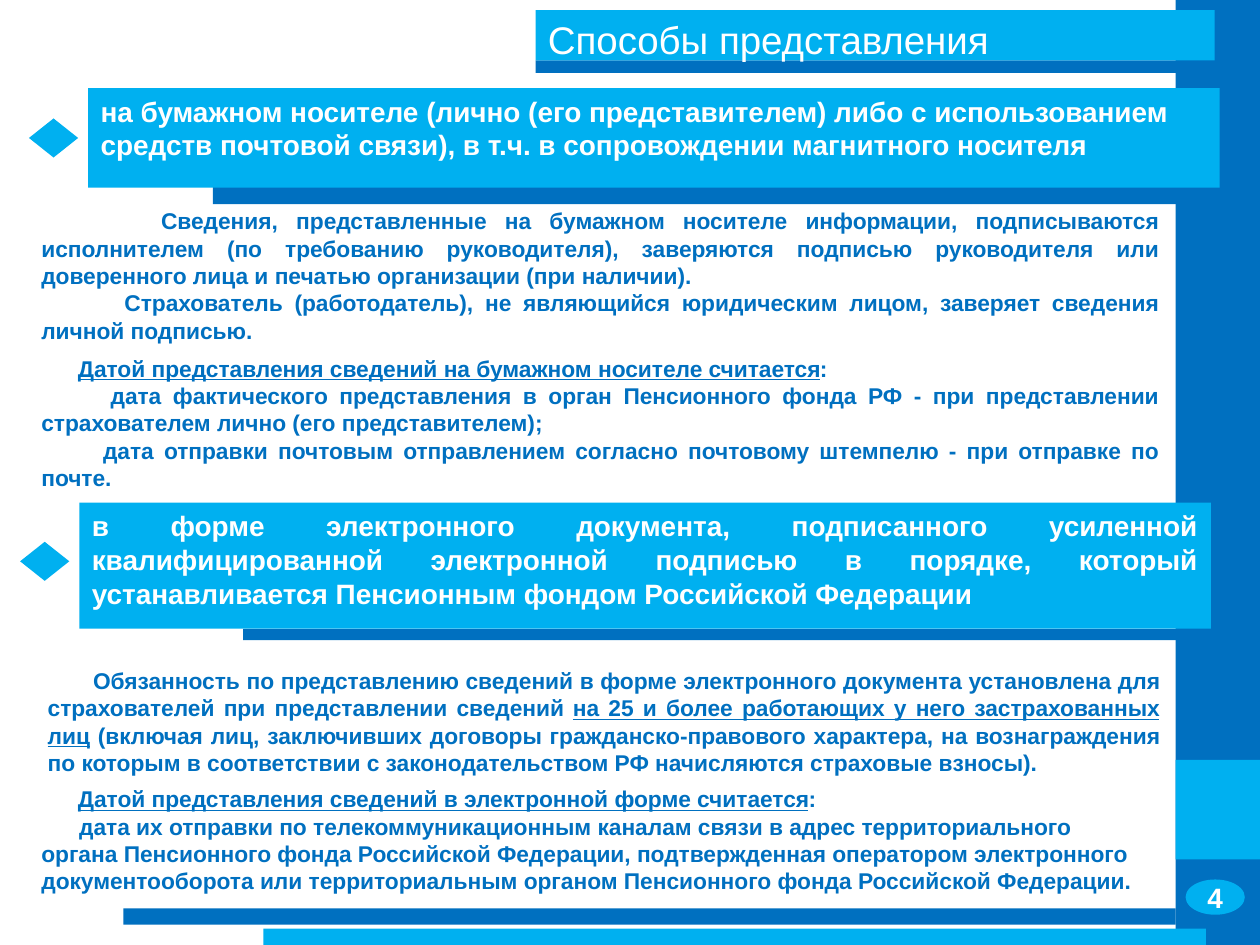
from pptx import Presentation
from pptx.dml.color import RGBColor
from pptx.enum.shapes import MSO_SHAPE as SH
from pptx.enum.text import MSO_ANCHOR as ANCHOR, PP_ALIGN as ALIGN
from pptx.util import Pt

PX = 9144  # 100 px to the inch
BLUE, SKY, WHITE = "0070C0", "00B0F0", "FFFFFF"

prs = Presentation()
prs.slide_width, prs.slide_height = 1000 * PX, 750 * PX
s = prs.slides.add_slide(prs.slide_layouts[6])


def add_shape(kind, box, color):
    sp = s.shapes.add_shape(kind, *[v * PX for v in box])
    sp.shadow.inherit = False
    sp.fill.solid()
    sp.fill.fore_color.rgb = RGBColor.from_string(color)
    sp.line.fill.background()
    return sp


def write(sp, paragraphs, size, color, bold=True, align=ALIGN.LEFT, anchor=ANCHOR.TOP):
    """Each paragraph is (first-line indent, run, run, ...); every second run is underlined."""
    tf = sp.text_frame
    tf.word_wrap = True
    tf.vertical_anchor = anchor
    for i, (indent, *runs) in enumerate(paragraphs):
        p = tf.paragraphs[0] if i == 0 else tf.add_paragraph()
        p.alignment = align
        if indent:
            p._p.get_or_add_pPr().set("indent", str(indent * PX))
        for j, text in enumerate(runs):
            r = p.add_run()
            r.text = text
            r.font.name, r.font.size, r.font.bold = "Arial", Pt(size), bold
            r.font.color.rgb = RGBColor.from_string(color)
            if j % 2:
                r.font.underline = True


# Side band, page number and footer bars
add_shape(SH.RECTANGLE, (933, 0, 67, 750), BLUE)
add_shape(SH.RECTANGLE, (933, 603, 67, 79), SKY)
number = add_shape(SH.OVAL, (941, 698, 47, 28), SKY)
write(number, [(0, "4")], 16, WHITE, align=ALIGN.CENTER, anchor=ANCHOR.MIDDLE)
add_shape(SH.RECTANGLE, (98, 721, 835, 13), BLUE)
add_shape(SH.RECTANGLE, (209, 737, 748, 13), SKY)

# Title and section banners, each with a dark bar below
banners = [
    ((425, 48, 539, 10), (425, 8, 539, 40), 22, False, ALIGN.LEFT,
     "Способы представления"),
    ((169, 147, 799, 15), (70, 70, 898, 79), 16, True, ALIGN.LEFT,
     "на бумажном носителе (лично (его представителем) либо с использованием "
     "средств почтовой связи), в т.ч. в сопровождении магнитного носителя"),
    ((193, 499, 768, 9), (63, 399, 898, 100), 16, True, ALIGN.JUSTIFY,
     "в форме электронного документа, подписанного усиленной квалифицированной "
     "электронной подписью в порядке, который устанавливается Пенсионным фондом "
     "Российской Федерации"),
]
for bar, box, size, bold, align, text in banners:
    add_shape(SH.RECTANGLE, bar, BLUE)
    write(add_shape(SH.RECTANGLE, box, SKY), [(0, text)], size, WHITE, bold, align)

# Diamond markers
for x, y in [(23, 94), (16, 430)]:
    add_shape(SH.DIAMOND, (x, y, 39, 31), SKY)

# Body texts
bodies = [
    ((23, 164, 906, 109), ALIGN.JUSTIFY, [
        (95, "Сведения, представленные на бумажном носителе информации, подписываются "
             "исполнителем (по требованию руководителя), заверяются подписью руководителя "
             "или доверенного лица и печатью организации (при наличии)."),
        (66, "Страхователь (работодатель), не являющийся юридическим лицом, заверяет "
             "сведения личной подписью."),
    ]),
    ((23, 281, 906, 109), ALIGN.JUSTIFY, [
        (29, "", "Датой представления сведений на бумажном носителе считается", ":"),
        (55, "дата фактического представления в орган Пенсионного фонда РФ - при "
             "представлении страхователем лично (его представителем);"),
        (49, "дата отправки почтовым отправлением согласно почтовому штемпелю - при "
             "отправке по почте."),
    ]),
    ((28, 518, 902, 109), ALIGN.JUSTIFY, [
        (36, "Обязанность по представлению сведений в форме электронного документа "
             "установлена для страхователей при представлении сведений ",
         "на 25 и более работающих у него застрахованных лиц",
         " (включая лиц, заключивших договоры гражданско-правового характера, на "
         "вознаграждения по которым в соответствии с законодательством РФ начисляются "
         "страховые взносы)."),
    ]),
    ((23, 612, 895, 109), ALIGN.LEFT, [
        (29, "", "Датой представления сведений в электронной форме считается", ":"),
        (30, "дата их отправки по телекоммуникационным каналам связи в адрес "
             "территориального органа Пенсионного фонда Российской Федерации, "
             "подтвержденная оператором электронного документооборота или "
             "территориальным органом Пенсионного фонда Российской Федерации."),
    ]),
]
for box, align, paragraphs in bodies:
    tb = s.shapes.add_textbox(*[v * PX for v in box])
    write(tb, paragraphs, 13, BLUE, align=align, anchor=ANCHOR.MIDDLE)

prs.save("out.pptx")
